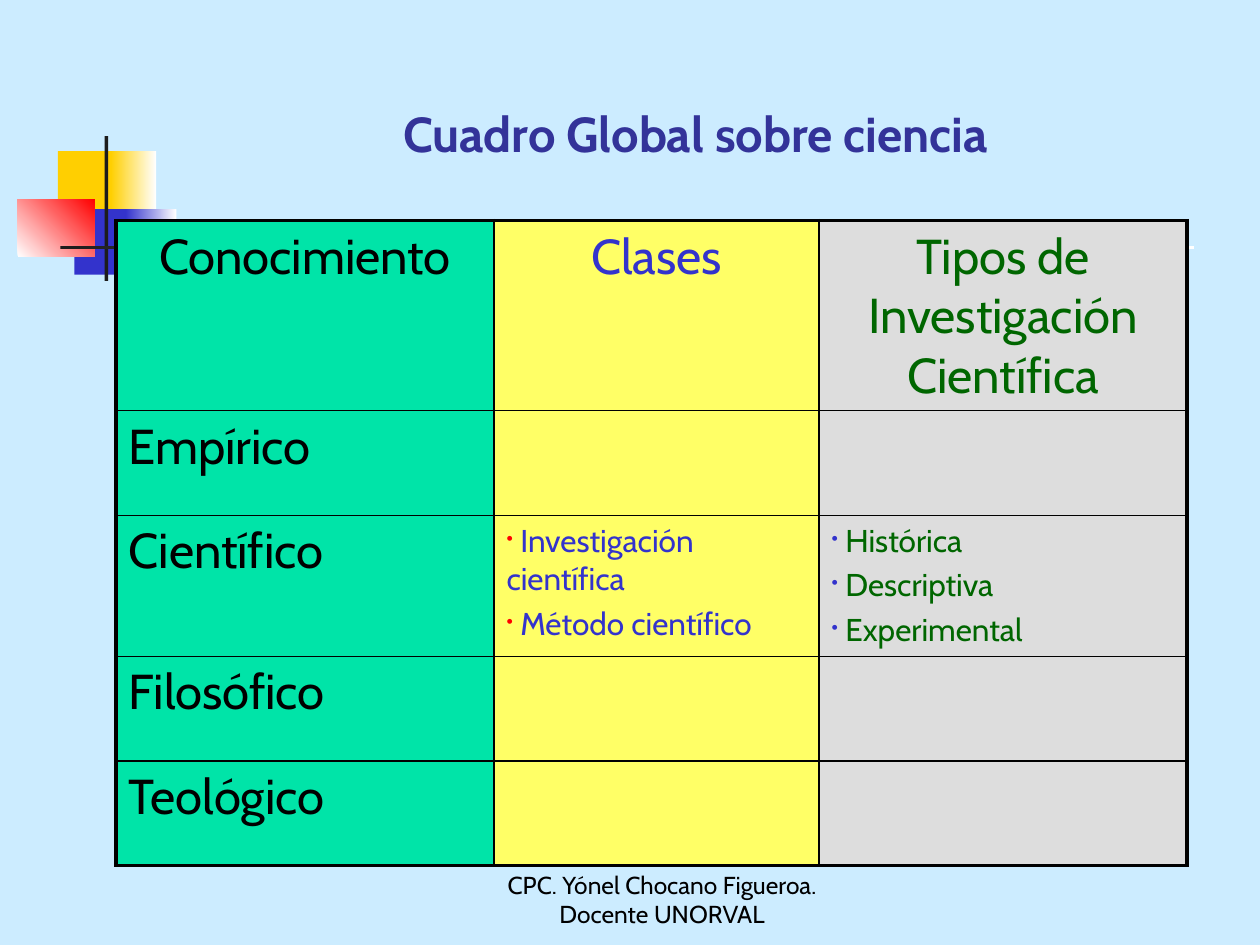
from dataclasses import dataclass

from lxml import etree
from pptx import Presentation
from pptx.dml.color import RGBColor
from pptx.enum.shapes import MSO_SHAPE
from pptx.enum.text import MSO_ANCHOR, PP_ALIGN
from pptx.oxml.ns import qn
from pptx.util import Inches, Pt

RECTANGLE = MSO_SHAPE.RECTANGLE
BOTTOM = MSO_ANCHOR.BOTTOM
CENTER, LEFT = PP_ALIGN.CENTER, PP_ALIGN.LEFT


@dataclass(frozen=True)
class Theme:
    font: str = "Cabin"
    background: str = "CCECFF"
    title: str = "333399"
    black: str = "000000"
    white: str = "FFFFFF"
    gold: str = "FFCF01"
    blue: str = "3333CC"
    red: str = "FF0000"
    charcoal: str = "1C1C1C"
    large: int = 28
    medium: int = 18
    small: int = 14
    outer_line: float = 2.25
    inner_line: float = 1
    space_before: float = 0.2  # share of the type size


@dataclass(frozen=True)
class Block:
    left: float
    top: float
    width: float
    height: float
    start: str
    end: str = ""  # second gradient colour; empty for a solid fill
    angle: float = 0


@dataclass(frozen=True)
class Column:
    heading: str
    width: float
    fill: str
    ink: str
    bullet: str = ""


THEME = Theme()

ORNAMENT = [
    Block(0.46, 1.2, 0.48, 0.52, THEME.gold),
    Block(0.88, 1.2, 0.36, 0.52, THEME.gold, THEME.white),
    Block(0.59, 1.66, 0.46, 0.52, THEME.blue),
    Block(1, 1.66, 0.4, 0.52, THEME.blue, THEME.white),
    Block(0.14, 1.58, 0.61, 0.46, THEME.white, THEME.red, 45),
    Block(0.83, 1.08, 0.03, 1.15, THEME.charcoal),
    Block(0.48, 1.95, 9, 0.03, THEME.charcoal, THEME.white),
]

COLUMNS = [
    Column("Conocimiento", 3, "00E4A8", THEME.black),
    Column("Clases", 2.58, "FFFF66", THEME.blue, THEME.red),
    Column("Tipos de Investigación Científica", 2.92, "DDDDDD", "006600", THEME.blue),
]
ROW_HEIGHTS = [1.51, 0.83, 1.12, 0.83, 0.83]
KINDS = ["Empírico", "Científico", "Filosófico", "Teológico"]
DETAILS = {
    "Científico": [
        ["Investigación científica", "Método científico"],
        ["Histórica", "Descriptiva", "Experimental"],
    ],
}


def style(paragraph, size: float, color: str, align=LEFT, bold: bool = False) -> None:
    paragraph.alignment = align
    font = paragraph.font
    font.name, font.size, font.bold = THEME.font, Pt(size), bold
    font.color.rgb = RGBColor.from_string(color)


def draw_block(slide, block: Block) -> None:
    shape = slide.shapes.add_shape(
        RECTANGLE, Inches(block.left), Inches(block.top), Inches(block.width), Inches(block.height))
    shape.shadow.inherit = False
    shape.line.fill.background()
    if not block.end:
        shape.fill.solid()
        shape.fill.fore_color.rgb = RGBColor.from_string(block.start)
        return
    shape.fill.gradient()
    shape.fill.gradient_angle = block.angle
    for stop, color in zip(shape.fill.gradient_stops, (block.start, block.end)):
        stop.color.rgb = RGBColor.from_string(color)


def draw_caption(slide, text: str, left: float, top: float, width: float, height: float,
                 size: float, color: str, bold: bool = False) -> None:
    frame = slide.shapes.add_textbox(
        Inches(left), Inches(top), Inches(width), Inches(height)).text_frame
    frame.word_wrap = True
    frame.vertical_anchor = BOTTOM
    frame.text = text
    style(frame.paragraphs[0], size, color, CENTER, bold)


def add_bullet(paragraph, color: str) -> None:
    properties = paragraph._p.get_or_add_pPr()
    properties.set("marL", "0")
    properties.set("indent", "0")
    marks = [etree.Element(qn(tag)) for tag in ("a:buClr", "a:buSzPct", "a:buChar")]
    etree.SubElement(marks[0], qn("a:srgbClr"), val=color)
    marks[1].set("val", "60000")
    marks[2].set("char", "•")
    properties.find(qn("a:defRPr")).getparent()
    for mark in marks:
        properties.find(qn("a:defRPr")).addprevious(mark)


def set_borders(cell, widths: dict[str, float]) -> None:
    properties = cell._tc.get_or_add_tcPr()
    for position, (side, width) in enumerate(widths.items()):
        line = etree.Element(qn(f"a:ln{side}"), w=str(Pt(width)))
        fill = etree.SubElement(line, qn("a:solidFill"))
        etree.SubElement(fill, qn("a:srgbClr"), val=THEME.black)
        properties.insert(position, line)


def write_cell(cell, lines: list[str], size: float, color: str, align=LEFT, bullet: str = "") -> None:
    # A single space separates each bullet from its words
    cell.text = "\n".join(f" {line}" if bullet else line for line in lines)
    for paragraph in cell.text_frame.paragraphs:
        style(paragraph, size, color, align)
        paragraph.space_before = Pt(size * THEME.space_before)
        if bullet:
            add_bullet(paragraph, bullet)


def draw_table(slide) -> None:
    rows, columns = len(ROW_HEIGHTS), len(COLUMNS)
    table = slide.shapes.add_table(
        rows, columns, Inches(0.92), Inches(1.75),
        Inches(sum(column.width for column in COLUMNS)), Inches(sum(ROW_HEIGHTS))).table
    for row, height in zip(table.rows, ROW_HEIGHTS):
        row.height = Inches(height)

    # Fills, borders and headings, column by column
    for c, column in enumerate(COLUMNS):
        table.columns[c].width = Inches(column.width)
        for r in range(rows):
            cell = table.cell(r, c)
            cell.fill.solid()
            cell.fill.fore_color.rgb = RGBColor.from_string(column.fill)
            outer = {"L": c == 0, "R": c == columns - 1, "T": r == 0, "B": r == rows - 1}
            set_borders(cell, {side: THEME.outer_line if edge else THEME.inner_line
                               for side, edge in outer.items()})
        write_cell(table.cell(0, c), [column.heading], THEME.large, column.ink, CENTER)

    # Kinds of knowledge and their details
    for r, kind in enumerate(KINDS, start=1):
        write_cell(table.cell(r, 0), [kind], THEME.large, COLUMNS[0].ink)
        for c, lines in enumerate(DETAILS.get(kind, []), start=1):
            column = COLUMNS[c]
            write_cell(table.cell(r, c), lines, THEME.medium, column.ink, bullet=column.bullet)


def main() -> None:
    presentation = Presentation()
    presentation.slide_width, presentation.slide_height = Inches(10), Inches(7.5)
    slide = presentation.slides.add_slide(presentation.slide_layouts[6])
    slide.background.fill.solid()
    slide.background.fill.fore_color.rgb = RGBColor.from_string(THEME.background)

    # Corner ornament
    for block in ORNAMENT:
        draw_block(slide, block)

    # Footer, title and table
    draw_caption(slide, "CPC. Yónel Chocano Figueroa. Docente UNORVAL",
                 3.67, 6.92, 3.17, 0.5, THEME.small, THEME.black)
    draw_caption(slide, "Cuadro Global sobre ciencia",
                 1.26, 0.68, 8.52, 0.66, THEME.large, THEME.title, bold=True)
    draw_table(slide)
    presentation.save("out.pptx")


if __name__ == "__main__":
    main()
